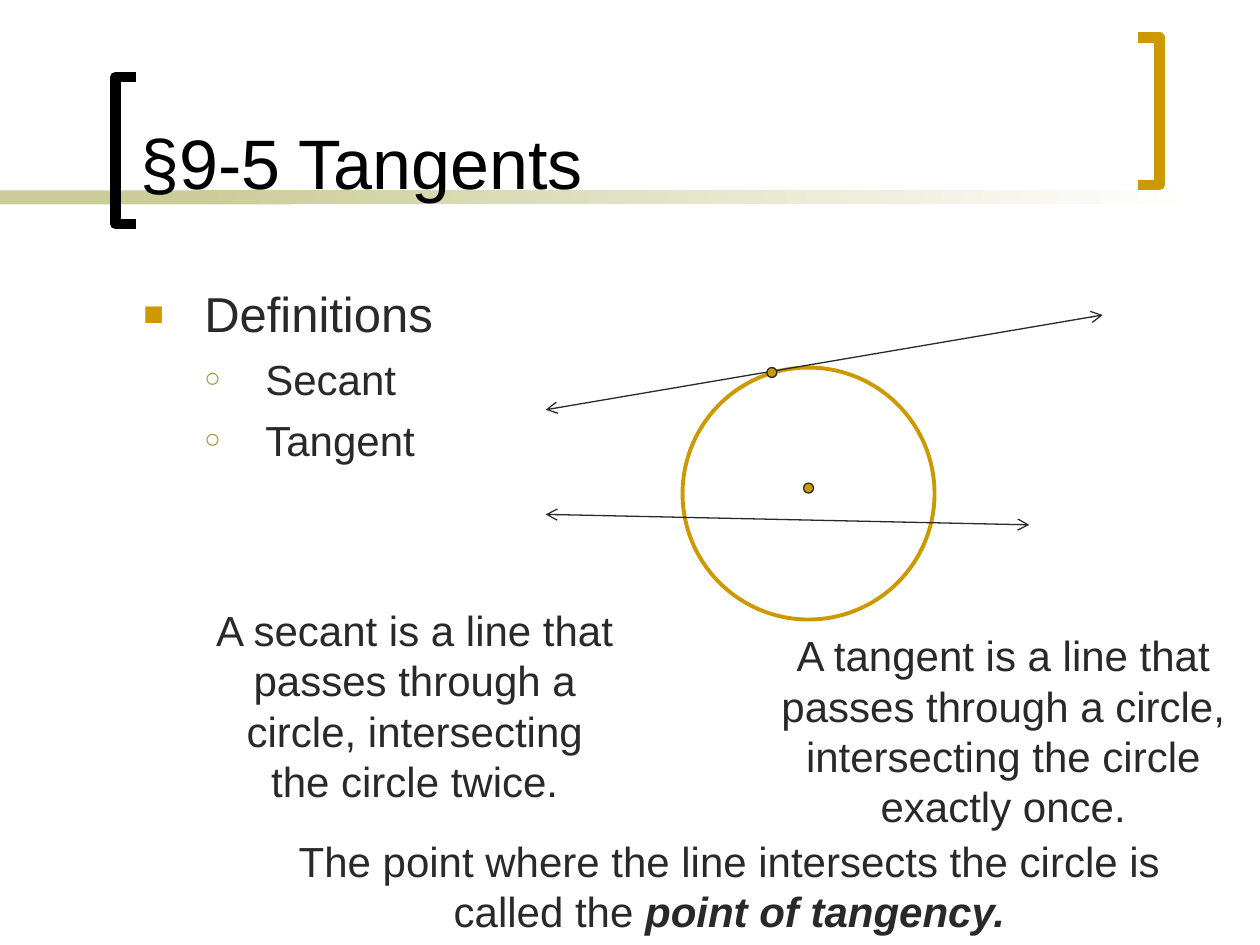
import dataclasses
import typing

import lxml.etree
import pptx
import pptx.dml.color
import pptx.enum.dml
import pptx.enum.shapes
import pptx.enum.text
import pptx.oxml.ns
import pptx.util

Cm = pptx.util.Cm
Pt = pptx.util.Pt
Kind = pptx.enum.shapes.MSO_SHAPE
Align = pptx.enum.text.PP_ALIGN
Anchor = pptx.enum.text.MSO_ANCHOR

HUES = {"black": "000000", "ink": "292929", "gold": "CC9900",
        "olive": "999933", "sand": "CCCC99", "white": "FFFFFF"}
FACE = "Arial"


@dataclasses.dataclass
class Box:
    left: float
    top: float
    width: float
    height: float

    def spot(self) -> tuple:
        return Cm(self.left), Cm(self.top), Cm(self.width), Cm(self.height)


@dataclasses.dataclass
class Item:
    text: str
    size: int
    level: int
    mark: str
    hue: str
    scale: int


@dataclasses.dataclass
class Note:
    box: Box
    text: str
    stress: str = ""


@dataclasses.dataclass
class Ray:
    start: tuple[float, float]
    end: tuple[float, float]


@dataclasses.dataclass
class Brace:
    tip: float
    spine: float
    top: float
    hue: str


ITEMS = [
    Item("Definitions", 28, 0, "■", "gold", 70),
    Item("Secant", 24, 1, "○", "olive", 65),
    Item("Tangent", 24, 1, "○", "olive", 65),
]
NOTES = [
    Note(Box(4.02, 12.06, 8.68, 4.37),
         "A secant is a line that passes through a circle, intersecting the circle twice."),
    Note(Box(15.45, 12.57, 9.55, 4.37),
         "A tangent is a line that passes through a circle, intersecting the circle exactly once."),
    Note(Box(5.08, 16.71, 19.25, 2.31),
         "The point where the line intersects the circle is called the ", "point of tangency."),
]
RAYS = [Ray((11, 10.37), (20.75, 10.58)), Ray((11, 8.26), (22.23, 6.35))]
DOTS = [(16.3, 9.84), (15.56, 7.51)]
BRACES = [Brace(2.75, 2.33, 1.55, "black"), Brace(22.95, 23.37, 0.76, "gold")]


def tint(hue: str) -> pptx.dml.color.RGBColor:
    return pptx.dml.color.RGBColor.from_string(HUES[hue])


def add_tag(node: typing.Any, name: str, **attrs: str) -> typing.Any:
    return lxml.etree.SubElement(node, pptx.oxml.ns.qn(name), attrs)


def set_line(line: typing.Any, hue: str, width: float) -> None:
    line.color.rgb = tint(hue)
    line.width = Pt(width)


def set_font(para: typing.Any, size: int, hue: str) -> None:
    para.font.name = FACE
    para.font.size = Pt(size)
    para.font.color.rgb = tint(hue)


def add_form(slide: typing.Any, kind: Kind, box: Box, fill: str = "") -> typing.Any:
    form = slide.shapes.add_shape(kind, *box.spot())
    form.shadow.inherit = False
    form.line.fill.background()
    if fill:
        form.fill.solid()
        form.fill.fore_color.rgb = tint(fill)
    else:
        form.fill.background()
    return form


def add_frame(slide: typing.Any, box: Box) -> typing.Any:
    frame = slide.shapes.add_textbox(*box.spot()).text_frame
    frame.word_wrap = True
    return frame


def add_band(slide: typing.Any) -> None:
    add_form(slide, Kind.RECTANGLE, Box(0, 3.84, 5.92, 0.28), "sand")
    fade = add_form(slide, Kind.RECTANGLE, Box(4.01, 3.84, 20.12, 0.28))
    fade.fill.gradient()
    fade.fill.gradient_angle = 0
    for stop, hue in zip(fade.fill.gradient_stops, ("sand", "white")):
        stop.color.rgb = tint(hue)


def add_brace(slide: typing.Any, brace: Brace) -> None:
    low = brace.top + 2.97
    path = slide.shapes.build_freeform(Cm(brace.tip), Cm(brace.top))
    points = [(brace.spine, brace.top), (brace.spine, low), (brace.tip, low)]
    path.add_line_segments([(Cm(x), Cm(y)) for x, y in points], close=False)
    form = path.convert_to_shape()
    form.shadow.inherit = False
    form.fill.background()
    set_line(form.line, brace.hue, 6)


def add_ray(slide: typing.Any, ray: Ray) -> None:
    ends = [Cm(n) for n in ray.start + ray.end]
    line = slide.shapes.add_connector(pptx.enum.shapes.MSO_CONNECTOR.STRAIGHT, *ends)
    set_line(line.line, "ink", 0.75)
    props = line._element.spPr
    stroke = props.find(pptx.oxml.ns.qn("a:ln"))
    for end in ("a:headEnd", "a:tailEnd"):
        add_tag(stroke, end, type="arrow")
    add_tag(props, "a:effectLst")


def add_title(slide: typing.Any) -> None:
    frame = add_frame(slide, Box(2.59, 0.28, 19.89, 3.94))
    frame.vertical_anchor = Anchor.BOTTOM
    para = frame.paragraphs[0]
    para.text = "§9-5 Tangents"
    set_font(para, 40, "black")


def add_list(slide: typing.Any) -> None:
    frame = add_frame(slide, Box(2.64, 5.6, 9.42, 12.6))
    for rank, item in enumerate(ITEMS):
        para = frame.add_paragraph() if rank else frame.paragraphs[0]
        para.text = item.text
        para.level = item.level
        if rank:
            para.space_before = Pt(6)
        props = para._p.get_or_add_pPr()
        props.set("marL", str(Cm(1.23 * (item.level + 1))))
        props.set("indent", str(-Cm(1.23)))
        add_tag(add_tag(props, "a:buClr"), "a:srgbClr", val=HUES[item.hue])
        add_tag(props, "a:buSzPct", val=str(item.scale * 1000))
        add_tag(props, "a:buFont", typeface=FACE)
        add_tag(props, "a:buChar", char=item.mark)
        set_font(para, item.size, "ink")


def add_note(slide: typing.Any, note: Note) -> None:
    para = add_frame(slide, note.box).paragraphs[0]
    para.alignment = Align.CENTER
    para.add_run().text = note.text
    if note.stress:
        run = para.add_run()
        run.text = note.stress
        run.font.bold = True
        run.font.italic = True
    set_font(para, 24, "ink")


def main() -> None:
    deck = pptx.Presentation()
    deck.slide_width, deck.slide_height = Cm(25.4), Cm(19.05)
    slide = deck.slides.add_slide(deck.slide_layouts[6])
    add_band(slide)
    for brace in BRACES:
        add_brace(slide, brace)
    add_title(slide)
    add_list(slide)
    ring = add_form(slide, Kind.OVAL, Box(13.76, 7.41, 5.08, 5.08))
    set_line(ring.line, "gold", 2.25)
    for ray in RAYS:
        add_ray(slide, ray)
    for x, y in DOTS:
        dot = add_form(slide, Kind.OVAL, Box(x - 0.1, y - 0.1, 0.2, 0.2), "gold")
        set_line(dot.line, "ink", 0.75)
    for note in NOTES:
        add_note(slide, note)
    deck.save("out.pptx")


if __name__ == "__main__":
    main()
